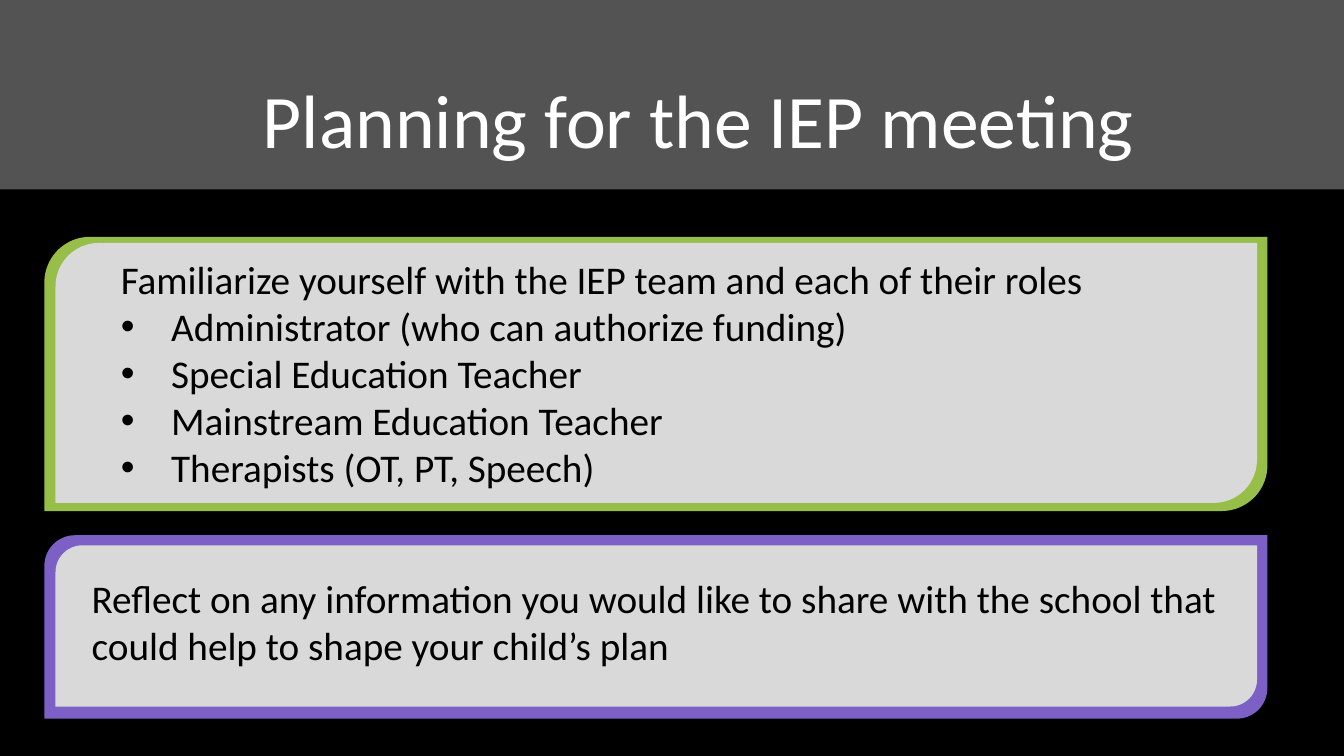
from lxml.etree import SubElement
from pptx import Presentation
from pptx.dml.color import RGBColor
from pptx.enum.shapes import MSO_SHAPE as Shape
from pptx.enum.text import MSO_AUTO_SIZE as AutoSize, PP_ALIGN as Align
from pptx.oxml.ns import qn
from pptx.util import Inches, Pt

WIDTH, HEIGHT = Inches(13.33), Inches(7.5)
FONT = "Calibri"
COLORS = {
    "background": "000000",
    "band": "A6A6A6",
    "panel": "D9D9D9",
    "team": "97BE49",
    "reflect": "7C60C6",
    "title": "FFFFFF",
    "body": "000000",
}
OUTER_X, OUTER_WIDTH = 3.3, 91
INNER_X, INNER_WIDTH = 4.13, 89.4
INDENT = Inches(0.5)

TEAM_HEADING = "Familiarize yourself with the IEP team and each of their roles"
TEAM_ROLES = [
    "Administrator (who can authorize funding)",
    "Special Education Teacher",
    "Mainstream Education Teacher",
    "Therapists (OT, PT, Speech)",
]
REFLECTION = (
    "Reflect on any information you would like to share with the school "
    "that could help to shape your child’s plan"
)


def color(name):
    return RGBColor.from_string(COLORS[name])


def place(left, top, width, height):
    return (
        int(WIDTH * left / 100),
        int(HEIGHT * top / 100),
        int(WIDTH * width / 100),
        int(HEIGHT * height / 100),
    )


def add_block(slide, kind, box, fill):
    shape = slide.shapes.add_shape(kind, *place(*box))
    shape.shadow.inherit = False
    shape.fill.solid()
    shape.fill.fore_color.rgb = color(fill)
    shape.line.fill.background()
    return shape


def add_band(slide):
    band = add_block(slide, Shape.RECTANGLE, (0, 0, 100, 25.07), "band")
    fill_color = next(band.element.spPr.iter(qn("a:srgbClr")))
    SubElement(fill_color, qn("a:alpha"), val="50000")


def add_card(slide, border, outer_rows, inner_rows):
    for left, width, (top, height), fill in (
        (OUTER_X, OUTER_WIDTH, outer_rows, border),
        (INNER_X, INNER_WIDTH, inner_rows, "panel"),
    ):
        box = (left, top, width, height)
        add_block(slide, Shape.ROUND_2_DIAG_RECTANGLE, box, fill)


def add_text(slide, box, lines, size=28, fill="body", align=Align.LEFT, wrap=True):
    frame = slide.shapes.add_textbox(*place(*box)).text_frame
    frame.word_wrap = wrap
    frame.auto_size = AutoSize.SHAPE_TO_FIT_TEXT
    frame.text = "\n".join(lines)
    for paragraph in frame.paragraphs:
        paragraph.alignment = align
        paragraph.font.name = FONT
        paragraph.font.size = Pt(size)
        paragraph.font.color.rgb = color(fill)
    return frame


def add_bullet(paragraph):
    properties = paragraph._p.get_or_add_pPr()
    properties.set("marL", str(INDENT))
    properties.set("indent", str(-INDENT))
    bullet_font = properties.makeelement(qn("a:buFont"), {"typeface": "Arial"})
    bullet = properties.makeelement(qn("a:buChar"), {"char": "•"})
    properties.insert(0, bullet_font)
    properties.insert(1, bullet)


def main():
    presentation = Presentation()
    presentation.slide_width, presentation.slide_height = WIDTH, HEIGHT
    slide = presentation.slides.add_slide(presentation.slide_layouts[6])
    slide.background.fill.solid()
    slide.background.fill.fore_color.rgb = color("background")

    add_band(slide)
    add_text(
        slide, (18.45, 8.93, 67.05, 13.47), ["Planning for the IEP meeting"],
        size=54, fill="title", align=Align.CENTER, wrap=False,
    )

    add_card(slide, "team", (31.33, 36.27), (32.13, 34.4))
    team = add_text(
        slide, (8.25, 33.07, 82.9, 39.07), [TEAM_HEADING, *TEAM_ROLES]
    )
    for paragraph in team.paragraphs[1:]:
        add_bullet(paragraph)

    add_card(slide, "reflect", (70.8, 24.27), (72.13, 21.33))
    add_text(slide, (6.08, 75.33, 85.43, 13.87), [REFLECTION])

    presentation.save("out.pptx")


if __name__ == "__main__":
    main()
